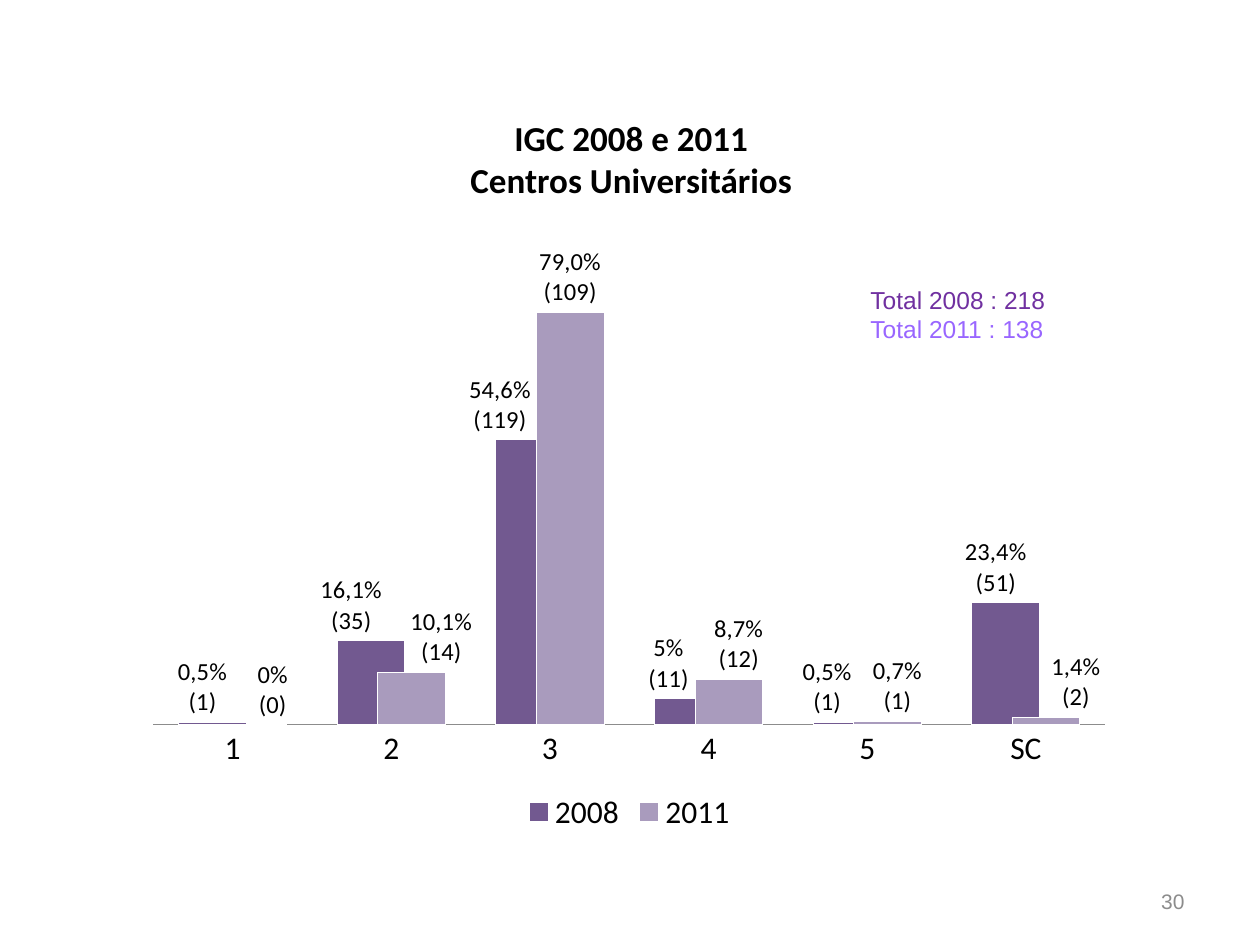
from lxml.etree import SubElement
from pptx import Presentation
from pptx.chart.data import CategoryChartData
from pptx.dml.color import RGBColor
from pptx.enum.chart import XL_CHART_TYPE, XL_LABEL_POSITION, XL_LEGEND_POSITION, XL_TICK_MARK
from pptx.enum.text import MSO_ANCHOR, PP_ALIGN
from pptx.oxml import parse_xml
from pptx.oxml.ns import nsdecls, qn
from pptx.util import Inches, Pt

BLACK = RGBColor(0x00, 0x00, 0x00)
WHITE = RGBColor(0xFF, 0xFF, 0xFF)
GRAY = RGBColor(0x8C, 0x8C, 0x8C)
PURPLE = RGBColor(0x70, 0x30, 0xA0)
LILAC = RGBColor(0x99, 0x66, 0xFF)
DARK_BAR = RGBColor(0x72, 0x59, 0x90)
LIGHT_BAR = RGBColor(0xA9, 0x9B, 0xBD)

PERCENT = "0.0%"
CATEGORIES = ["1", "2", "3", "4", "5", "SC"]
# Each point: value, label, horizontal label shift as a fraction of the chart width
SERIES = {
    "2008": (DARK_BAR, [
        (0.005, "0,5%\n(1)", -0.01), (0.161, "16,1%\n(35)", -0.02),
        (0.546, "54,6%\n(119)", -0.03), (0.05, "5%\n(11)", -0.02),
        (0.005, "0,5%\n(1)", -0.02), (0.234, "23,4%\n(51)", -0.01)]),
    "2011": (LIGHT_BAR, [
        (0, "0%\n(0)", 0.02), (0.101, "10,1%\n(14)", 0.03),
        (0.79, "79,0%\n(109)", 0), (0.087, "8,7%\n(12)", 0.01),
        (0.007, "0,7%\n(1)", 0.01), (0.014, "1,4%\n(2)", 0.03)]),
}


def manual_layout(**values):
    layout = parse_xml(f"<c:layout {nsdecls('c')}/>")
    manual = SubElement(layout, qn("c:manualLayout"))
    for name, value in values.items():
        SubElement(manual, qn(f"c:{name}")).set("val", str(value))
    return layout


class SlideBuilder:
    styles = {
        "title": {"name": "Calibri", "size": Pt(20), "bold": True},
        "number": {"name": "Arial", "size": Pt(12)},
        "total": {"name": "Arial", "size": Pt(14)},
        "chart": {"name": "Calibri", "size": Pt(18)},
        "label": {"name": "Calibri", "size": Pt(14)},
    }

    def __init__(self, presentation):
        self.slide = presentation.slides.add_slide(presentation.slide_layouts[6])

    def format(self, font, style, color=BLACK):
        for name, value in self.styles[style].items():
            setattr(font, name, value)
        font.color.rgb = color

    def add_text(self, box, lines, style, align=PP_ALIGN.LEFT, anchor=MSO_ANCHOR.TOP):
        """Add a text box with one paragraph for each (text, color) pair."""
        shape = self.slide.shapes.add_textbox(*map(Inches, box))
        frame = shape.text_frame
        frame.word_wrap = True
        frame.vertical_anchor = anchor
        for index, (text, color) in enumerate(lines):
            paragraph = frame.add_paragraph() if index else frame.paragraphs[0]
            paragraph.text = text
            paragraph.alignment = align
            for run in paragraph.runs:
                self.format(run.font, style, color)

    def add_column_chart(self, box):
        data = CategoryChartData(number_format=PERCENT)
        data.categories = CATEGORIES
        for name, (_, points) in SERIES.items():
            data.add_series(name, [value for value, _, _ in points])
        chart = self.slide.shapes.add_chart(
            XL_CHART_TYPE.COLUMN_CLUSTERED, *map(Inches, box), data).chart
        self.format(chart.font, "chart")
        chart.has_title = False
        chart.has_legend = True
        chart.legend.position = XL_LEGEND_POSITION.BOTTOM
        chart.legend.include_in_layout = False

        value_axis = chart.value_axis
        value_axis.visible = False
        value_axis.has_major_gridlines = False
        value_axis.minimum_scale, value_axis.maximum_scale = 0, 0.9
        value_axis.tick_labels.number_format = PERCENT
        value_axis.tick_labels.number_format_is_linked = False
        category_axis = chart.category_axis
        category_axis.major_tick_mark = XL_TICK_MARK.NONE
        category_axis.format.line.color.rgb = GRAY
        category_axis.format.line.width = Pt(0.5)

        plot = chart.plots[0]
        plot.vary_by_categories = False
        plot.gap_width, plot.overlap = 75, 40
        for series, (color, points) in zip(plot.series, SERIES.values()):
            self.style_series(series, color, points)

        plot_area = chart._chartSpace.chart.plotArea
        for layout in plot_area.findall(qn("c:layout")):
            plot_area.remove(layout)
        plot_area.insert(0, manual_layout(
            layoutTarget="inner", xMode="edge", yMode="edge", x=0.02, y=0.02, w=0.96, h=0.79))

    def style_series(self, series, color, points):
        series.format.fill.solid()
        series.format.fill.fore_color.rgb = color
        series.format.line.color.rgb = WHITE
        labels = series.data_labels
        labels.show_value = True
        labels.number_format = PERCENT
        labels.number_format_is_linked = False
        labels.position = XL_LABEL_POSITION.OUTSIDE_END
        self.format(labels.font, "label")
        for index, (_, text, _) in enumerate(points):
            label = series.points[index].data_label
            label.text_frame.text = text
            for paragraph in label.text_frame.paragraphs:
                self.format(paragraph.runs[0].font, "label")
            label.position = XL_LABEL_POSITION.OUTSIDE_END
        elements = series._element.findall(f"{qn('c:dLbls')}/{qn('c:dLbl')}")
        for element, (_, _, shift) in zip(elements, points):
            if shift:
                element.insert(1, manual_layout(x=shift, y=0))


def main():
    presentation = Presentation()
    presentation.slide_width, presentation.slide_height = Inches(10), Inches(7.5)
    builder = SlideBuilder(presentation)
    builder.add_text((0.51, 0.75, 9, 1.02), [("IGC 2008 e 2011\vCentros Universitários", BLACK)],
                     "title", PP_ALIGN.CENTER, MSO_ANCHOR.MIDDLE)
    builder.add_text((7.17, 6.95, 2.33, 0.4), [("30", GRAY)],
                     "number", PP_ALIGN.RIGHT, MSO_ANCHOR.MIDDLE)
    builder.add_column_chart((1.06, 1.93, 7.87, 4.72))
    builder.add_text((6.81, 2.21, 2.68, 0.57),
                     [("Total 2008 : 218", PURPLE), ("Total 2011 : 138", LILAC)], "total")
    presentation.save("out.pptx")


if __name__ == "__main__":
    main()
